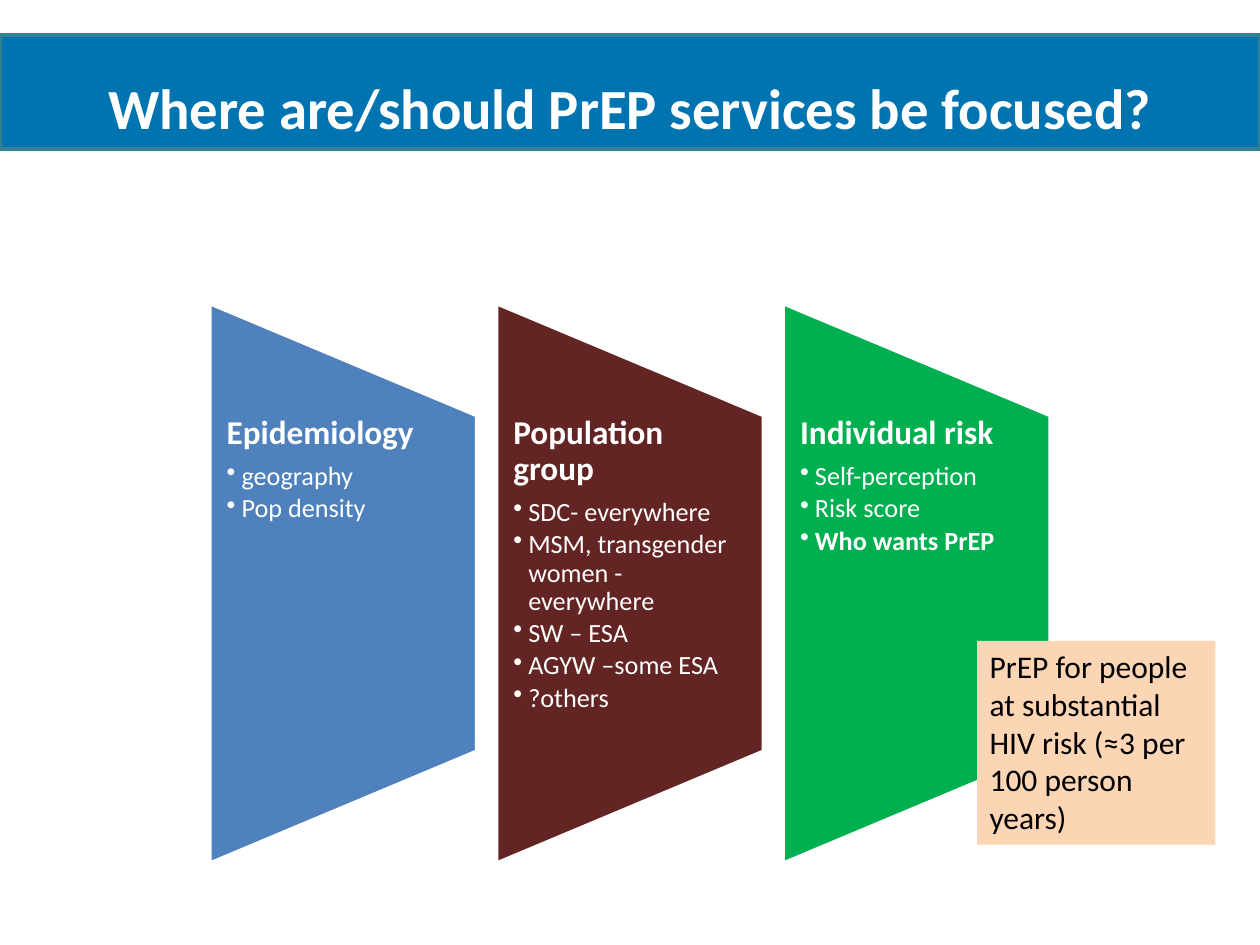
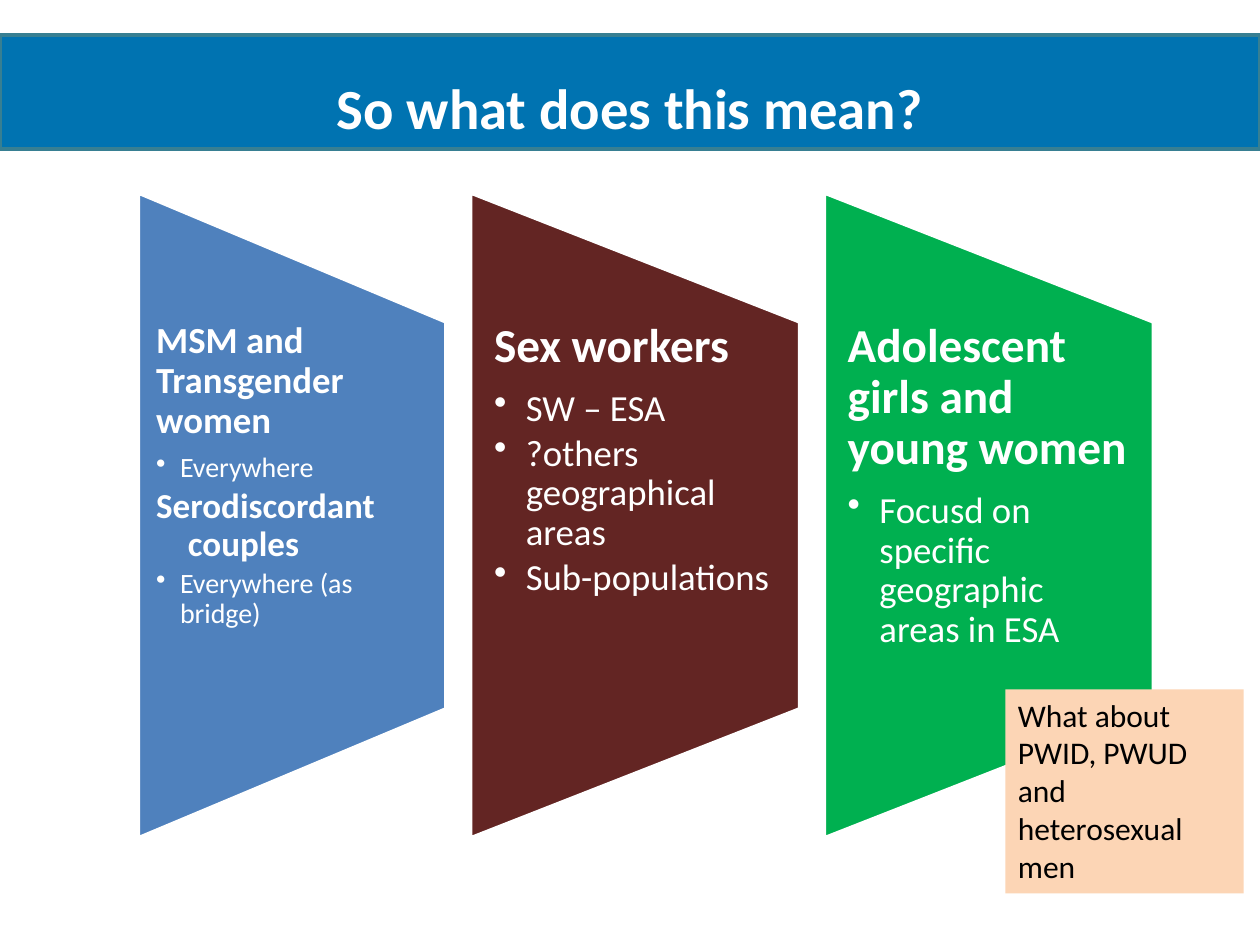
from lxml import etree
from pptx import Presentation
from pptx.dml.color import RGBColor
from pptx.enum.shapes import MSO_SHAPE
from pptx.enum.text import MSO_ANCHOR, MSO_AUTO_SIZE, PP_ALIGN
from pptx.oxml.ns import qn
from pptx.util import Cm, Pt

TRAPEZOID = MSO_SHAPE.FLOWCHART_MANUAL_OPERATION
MIDDLE = MSO_ANCHOR.MIDDLE
NO_FIT = MSO_AUTO_SIZE.NONE
CENTER = PP_ALIGN.CENTER

FONT = "Calibri"
WHITE = RGBColor(0xFF, 0xFF, 0xFF)
BLACK = RGBColor(0x00, 0x00, 0x00)
BAND_BLUE = RGBColor(0x00, 0x73, 0xB1)
BAND_EDGE = RGBColor(0x37, 0x7F, 0x92)
PEACH = RGBColor(0xFC, 0xD5, 0xB5)
PANEL_COLORS = [
    RGBColor(0x4F, 0x81, 0xBD),
    RGBColor(0x63, 0x25, 0x23),
    RGBColor(0x00, 0xB0, 0x50),
]

# Panel styles: width, side inset and bullet indent in cm, then text sizes in points
SMALL = dict(width=5.38, inset=0.34, indent=0.3, heading=19, body=15)
MEDIUM = dict(width=6.2, inset=0.36, indent=0.48, heading=21, body=16)
LARGE = dict(width=6.63, inset=0.47, indent=0.64, heading=27, body=21)
SUBHEAD_SIZE, SUBHEAD_INDENT = 20, 0.64

# Each panel: style, heading, items as (text, kind)
SLIDES = [
    dict(
        title="Where are/should PrEP services be focused?",
        left=4.23, top=6.12, height=11.28, gap=0.4,
        panels=[
            (SMALL, "Epidemiology",
             [("geography", "bullet"), ("Pop density", "bullet")]),
            (SMALL, "Population group",
             [("SDC- everywhere", "bullet"),
              ("MSM, transgender women - everywhere", "bullet"),
              ("SW – ESA", "bullet"),
              ("AGYW –some ESA", "bullet"),
              ("?others", "bullet")]),
            (SMALL, "Individual risk",
             [("Self-perception", "bullet"), ("Risk score", "bullet"),
              ("Who wants PrEP", "bold bullet")]),
        ],
        note="PrEP for people at substantial HIV risk (≈3 per 100 person years)",
        note_at=(19.7, 12.92),
    ),
    dict(
        title="So what does this mean?",
        left=2.79, top=3.89, height=13.0, gap=0.5,
        panels=[
            (MEDIUM, "MSM and Transgender women",
             [("Everywhere", "bullet"), ("Serodiscordant couples", "subhead"),
              ("Everywhere (as bridge)", "bullet")]),
            (LARGE, "Sex workers",
             [("SW – ESA", "bullet"), ("?others geographical areas", "bullet"),
              ("Sub-populations", "bullet")]),
            (LARGE, "Adolescent girls and young women",
             [("Focusd on specific geographic areas in ESA", "bullet")]),
        ],
        note="What about PWID, PWUD and heterosexual men",
        note_at=(20.27, 13.9),
    ),
]


def set_font(p, size, color, bold=False):
    p.font.name = FONT
    p.font.size = Pt(size)
    p.font.bold = bold
    p.font.color.rgb = color


def set_hanging(p, indent, bullet):
    """Give a paragraph a hanging indent in cm, with or without a bullet."""
    pPr = p._p.get_or_add_pPr()
    pPr.set("marL", str(Cm(indent)))
    pPr.set("indent", str(-Cm(indent)))
    mark = etree.Element(qn("a:buChar" if bullet else "a:buNone"))
    if bullet:
        mark.set("char", "•")
    # Bullets come after spacing and before the default run properties
    pPr.find(qn("a:defRPr")).addprevious(mark)


prs = Presentation()
prs.slide_width, prs.slide_height = Cm(25.4), Cm(19.05)

for content in SLIDES:
    s = prs.slides.add_slide(prs.slide_layouts[5])

    band = s.shapes.title
    band.left, band.top, band.width, band.height = Cm(0), Cm(0.71), Cm(25.4), Cm(2.29)
    band.fill.solid()
    band.fill.fore_color.rgb = BAND_BLUE
    band.line.color.rgb = BAND_EDGE
    band.line.width = Pt(2)
    tf = band.text_frame
    tf.text = content["title"]
    tf.auto_size = NO_FIT
    tf.vertical_anchor = MIDDLE
    tf.margin_top = Cm(0.71)
    p = tf.paragraphs[0]
    p.alignment = CENTER
    set_font(p, 32.4, WHITE, bold=True)

    left, top, height = content["left"], content["top"], content["height"]
    for color, (style, heading, items) in zip(PANEL_COLORS, content["panels"]):
        width = style["width"]
        # The trapezoid is turned a quarter about its centre
        shift = (height - width) / 2
        sp = s.shapes.add_shape(TRAPEZOID, Cm(left - shift), Cm(top + shift),
                                Cm(height), Cm(width))
        sp.rotation = 270
        sp.shadow.inherit = False
        sp.fill.solid()
        sp.fill.fore_color.rgb = color
        sp.line.color.rgb = WHITE
        sp.line.width = Pt(2)

        # The text takes the middle three fifths of the panel
        box = s.shapes.add_textbox(Cm(left), Cm(top + height / 5),
                                   Cm(width), Cm(height * 3 / 5))
        tf = box.text_frame
        tf.word_wrap = True
        tf.margin_left = tf.margin_right = Cm(style["inset"])
        tf.margin_top = tf.margin_bottom = 0
        p = tf.paragraphs[0]
        p.text = heading
        p.line_spacing = 0.9
        p.space_after = Pt(round(0.35 * style["heading"], 1))
        set_font(p, style["heading"], WHITE, bold=True)

        for text, kind in items:
            subhead = kind == "subhead"
            size = SUBHEAD_SIZE if subhead else style["body"]
            p = tf.add_paragraph()
            p.text = text
            p.level = 1
            p.line_spacing = 0.9
            p.space_after = Pt(round(0.15 * size, 1))
            set_font(p, size, WHITE, bold=kind != "bullet")
            set_hanging(p, SUBHEAD_INDENT if subhead else style["indent"], not subhead)
        left += width + content["gap"]

    note_left, note_top = content["note_at"]
    note = s.shapes.add_textbox(Cm(note_left), Cm(note_top), Cm(4.8), Cm(4.11))
    note.fill.solid()
    note.fill.fore_color.rgb = PEACH
    tf = note.text_frame
    tf.word_wrap = True
    tf.text = content["note"]
    set_font(tf.paragraphs[0], 18, BLACK)

prs.save("out.pptx")
